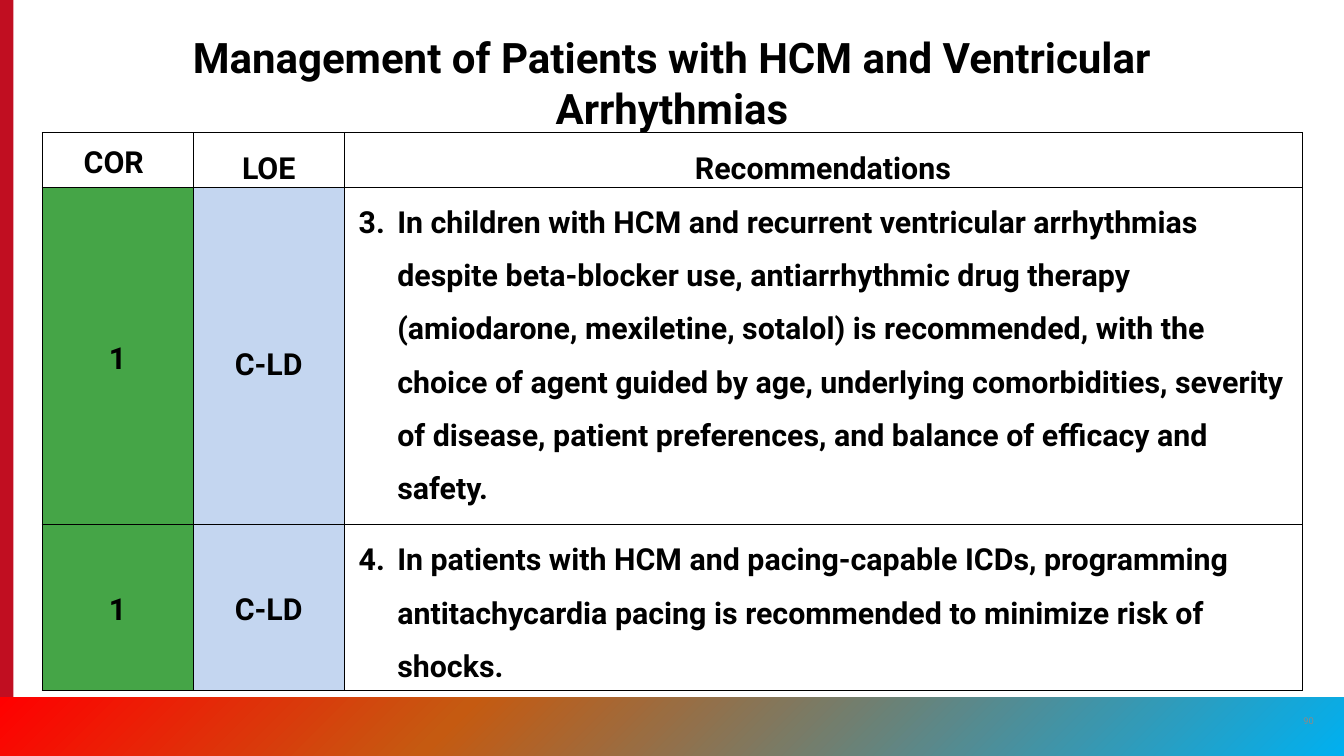
from lxml.etree import SubElement
from copy import deepcopy
from pptx import Presentation
from pptx.dml.color import RGBColor
from pptx.enum.shapes import MSO_SHAPE as SHAPE
from pptx.enum.text import MSO_ANCHOR as ANCHOR, MSO_AUTO_SIZE as AUTO, PP_ALIGN as ALIGN
from pptx.oxml.ns import qn
from pptx.util import Inches, Pt

BLACK = RGBColor(0x00, 0x00, 0x00)
WHITE = RGBColor(0xFF, 0xFF, 0xFF)
GRAY = RGBColor(0x8A, 0x8B, 0x8A)
CRIMSON = RGBColor(0xC1, 0x0E, 0x21)
RED = RGBColor(0xFF, 0x00, 0x00)
ORANGE = RGBColor(0xC5, 0x5A, 0x11)
BLUE = RGBColor(0x00, 0xB0, 0xF0)
GREEN = RGBColor(0x45, 0xA5, 0x47)
PALE_BLUE = RGBColor(0xC4, 0xD6, 0xF0)

FONT = "Roboto"
COLS, ROWS = 160, 90  # slide grid
UNIT = Inches(16) / COLS


def grid(*units):
    return [round(u * UNIT) for u in units]


def write(tf, text, size=26, color=BLACK, bold=True, align=ALIGN.CENTER,
          spacing=1.0, hanging=None):
    """Write one formatted paragraph; hanging is (margin, indent) in inches."""
    p = tf.paragraphs[0]
    p.alignment, p.line_spacing = align, spacing
    if hanging:
        pPr = p._p.get_or_add_pPr()
        margin, indent = hanging
        pPr.set("marL", str(Inches(margin)))
        pPr.set("indent", str(Inches(indent)))
    r = p.add_run()
    r.text = text
    r.font.name, r.font.size, r.font.bold = FONT, Pt(size), bold
    r.font.color.rgb = color


class Deck:
    def __init__(self):
        self.prs = Presentation()
        self.prs.slide_width, self.prs.slide_height = grid(COLS, ROWS)
        self.slide = self.prs.slides.add_slide(self.prs.slide_layouts[5])

    def bar(self, box, *stops):
        """Add a band with one colour, or with (share, colour) gradient stops."""
        sp = self.slide.shapes.add_shape(SHAPE.RECTANGLE, *grid(*box))
        sp.shadow.inherit = False
        sp.line.fill.background()
        if len(stops) == 1:
            sp.fill.solid()
            sp.fill.fore_color.rgb = stops[0]
            return
        sp.fill.gradient()
        sp.fill.gradient_angle = 315
        gs_list = sp._element.spPr.find(qn("a:gradFill")).find(qn("a:gsLst"))
        while len(gs_list) < len(stops):
            gs_list.append(deepcopy(gs_list[-1]))
        for stop, (share, color) in zip(sp.fill.gradient_stops, stops):
            stop.position, stop.color.rgb = share, color

    def label(self, box, text, **fmt):
        tf = self.slide.shapes.add_textbox(*grid(*box)).text_frame
        tf.word_wrap, tf.vertical_anchor = True, ANCHOR.MIDDLE
        write(tf, text, **fmt)

    def title(self, box, text, **fmt):
        sp = self.slide.shapes.title
        sp.left, sp.top, sp.width, sp.height = grid(*box)
        tf = sp.text_frame
        tf.word_wrap, tf.auto_size = True, AUTO.NONE
        tf.vertical_anchor = ANCHOR.TOP
        write(tf, text, **fmt)
        self.slide.shapes._spTree.append(sp._element)  # in front of the table

    def cell(self, cell, text, fill, anchor=ANCHOR.MIDDLE, **fmt):
        cell.margin_left = cell.margin_right = Inches(0.07)
        cell.margin_top = cell.margin_bottom = 0
        cell.vertical_anchor = anchor
        tcPr = cell._tc.get_or_add_tcPr()
        for side in ("lnL", "lnR", "lnT", "lnB"):
            ln = SubElement(tcPr, qn(f"a:{side}"), w=str(Pt(1)))
            line = SubElement(ln, qn("a:solidFill"))
            SubElement(line, qn("a:srgbClr"), val=str(BLACK))
        cell.fill.solid()
        cell.fill.fore_color.rgb = fill
        write(cell.text_frame, text, **fmt)

    def table(self, left, top, widths, heights, rows):
        box = grid(left, top, sum(widths), sum(heights))
        tbl = self.slide.shapes.add_table(len(rows), len(widths), *box).table
        tbl.first_row = tbl.horz_banding = False
        for col, width in zip(tbl.columns, grid(*widths)):
            col.width = width
        for row, height, cells in zip(tbl.rows, grid(*heights), rows):
            row.height = height
            for cell, (text, fill, fmt) in zip(row.cells, cells):
                self.cell(cell, text, fill, **fmt)


def main():
    deck = Deck()

    # Side and bottom bands, slide number
    deck.bar((0, 0, 1.6, 90), CRIMSON)
    deck.bar((0, 83, 160, 7), (0, RED), (0.34, ORANGE), (1, BLUE))
    deck.label((153.4, 83.4, 4.8, 4.8), "90", size=8, color=GRAY, bold=False)

    # Recommendations table
    tight, loose = {"spacing": 1.15}, {"spacing": 1.5}
    item = dict(loose, align=ALIGN.LEFT, anchor=ANCHOR.TOP, hanging=(0.56, -0.46))
    deck.table(5, 15.8, (18, 18, 114), (6, 40.2, 19.7), [
        [("COR ", WHITE, tight), ("LOE", WHITE, loose),
         ("Recommendations", WHITE, loose)],
        [("1", GREEN, tight), ("C-LD", PALE_BLUE, loose),
         ("3.\tIn children with HCM and recurrent ventricular arrhythmias "
          "despite beta-blocker use, antiarrhythmic drug therapy (amiodarone, "
          "mexiletine, sotalol) is recommended, with the choice of agent guided "
          "by age, underlying comorbidities, severity of disease, patient "
          "preferences, and balance of efficacy and safety.", WHITE, item)],
        [("1", GREEN, tight), ("C-LD", PALE_BLUE, tight),
         ("4.\tIn patients with HCM and pacing-capable ICDs, programming "
          "antitachycardia pacing is recommended to minimize risk of shocks.",
          WHITE, item)],
    ])

    # Title
    deck.title((19, 3.3, 122, 13.1),
               "Management of Patients with HCM and Ventricular Arrhythmias", size=36)

    deck.prs.save("out.pptx")


if __name__ == "__main__":
    main()
